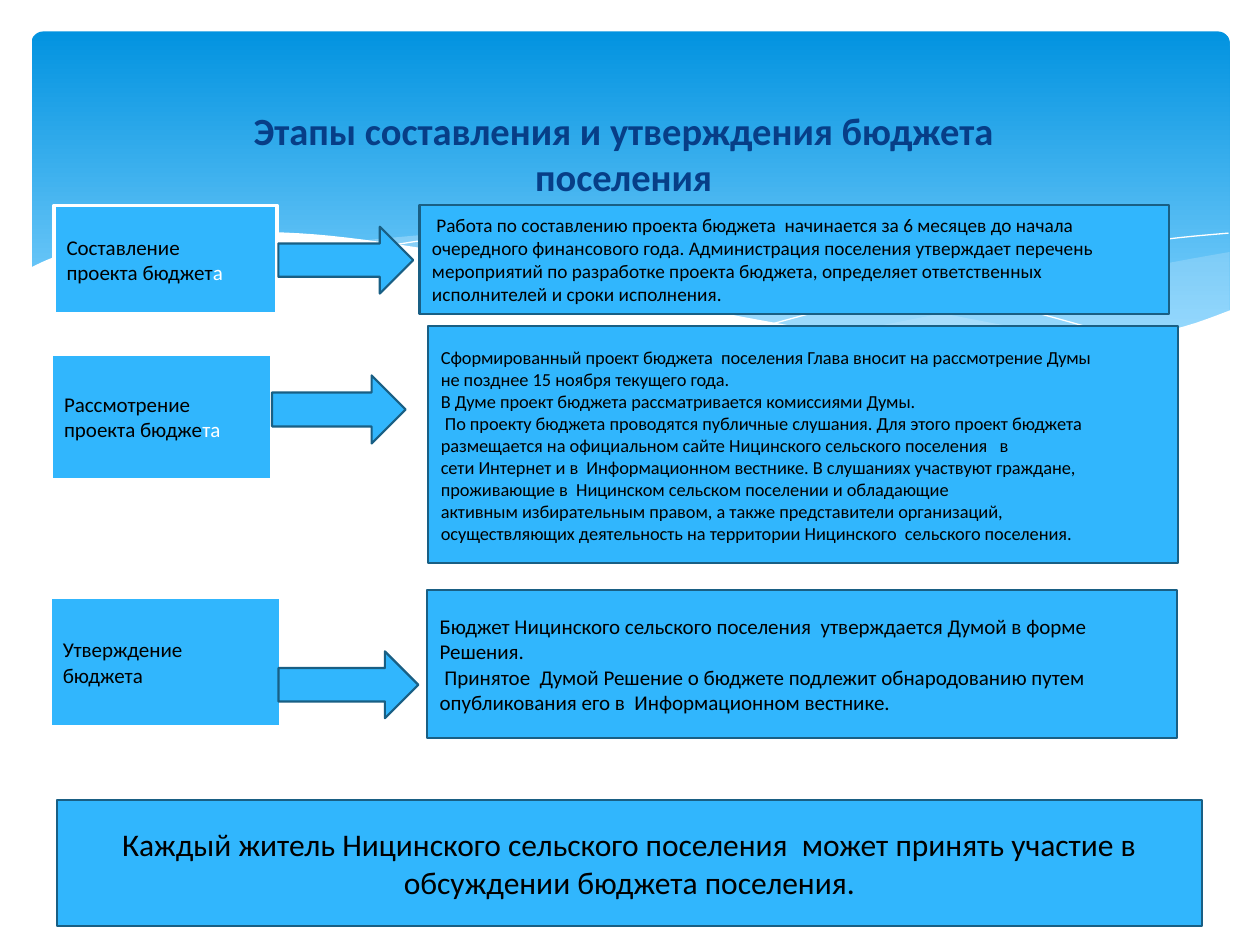
from lxml import etree
from pptx import Presentation
from pptx.dml.color import RGBColor
from pptx.enum.shapes import MSO_SHAPE
from pptx.enum.text import MSO_ANCHOR, PP_ALIGN
from pptx.oxml.ns import qn
from pptx.util import Inches, Pt

RECT, ARROW, ROUNDED = MSO_SHAPE.RECTANGLE, MSO_SHAPE.RIGHT_ARROW, MSO_SHAPE.ROUNDED_RECTANGLE
LEFT, CENTER = PP_ALIGN.LEFT, PP_ALIGN.CENTER
TOP, MIDDLE = MSO_ANCHOR.TOP, MSO_ANCHOR.MIDDLE
FONT = "Calibri"
BLUE, EDGE, NAVY, WHITE, BLACK, MIST = "31B6FD", "195F84", "073E87", "FFFFFF", "000000", "C6E7FC"

WAVE_EDGE = [(0.23, 2.13), (0.46, 2.03), (0.85, 1.93), (1.32, 1.86), (1.93, 1.84), (2.5, 1.86),
             (3.16, 1.94), (3.91, 2.07), (4.47, 2.2), (5.29, 2.39), (6.03, 2.54), (6.88, 2.68),
             (7.61, 2.75), (8.23, 2.77), (8.87, 2.71), (9.4, 2.59), (9.77, 2.46)]
RIGHT_TOP = [(9.76, 2), (9.21, 2.1), (8.61, 2.23), (7.79, 2.42), (7.06, 2.57), (6.61, 2.65)]
RIGHT_BOTTOM = [(6.61, 2.65), (7.19, 2.72), (7.69, 2.77), (8.14, 2.78), (8.63, 2.75),
                (9.05, 2.69), (9.42, 2.59), (9.76, 2.47)]
MIDDLE_TOP = [(8.93, 2.73), (8.07, 2.6), (7.06, 2.4), (6.29, 2.22), (5.55, 2.05), (4.89, 1.94),
              (4.2, 1.87), (3.61, 1.85), (2.86, 1.91)]
MIDDLE_BOTTOM = [(2.86, 1.91), (3.62, 2.03), (4.49, 2.22), (5.3, 2.4), (6.18, 2.58), (6.95, 2.7),
                 (7.61, 2.77), (8.18, 2.78), (8.57, 2.77), (8.93, 2.73)]
LONG_LINE = [(3.09, 1.95), (3.44, 1.9), (4.01, 1.87), (4.69, 1.89), (5.33, 1.94), (6.08, 2.04),
             (6.95, 2.19), (7.95, 2.41), (9.07, 2.72)]
SHORT_LINE = [(6.13, 2.57), (6.95, 2.35), (7.76, 2.16), (8.66, 1.99), (9.24, 1.9), (9.75, 1.85)]

STAGES = [
    dict(name="Составление\nпроекта бюджета", tail=1, size=11,
         name_box=(0.43, 1.63, 1.77, 0.86), arrow_box=(2.21, 1.8, 1.07, 0.53),
         detail_box=(3.33, 1.63, 5.95, 0.86),
         detail=" Работа по составлению проекта бюджета  начинается за 6 месяцев до начала\n"
                "очередного финансового года. Администрация поселения утверждает перечень\n"
                "мероприятий по разработке проекта бюджета, определяет ответственных\n"
                "исполнителей и сроки исполнения."),
    dict(name="Рассмотрение\nпроекта бюджета", tail=2, size=10.5,
         name_box=(0.41, 2.81, 1.75, 1), arrow_box=(2.16, 2.98, 1.06, 0.54),
         detail_box=(3.4, 2.59, 5.95, 1.88),
         detail="Сформированный проект бюджета  поселения Глава вносит на рассмотрение Думы\n"
                "не позднее 15 ноября текущего года.\n"
                "В Думе проект бюджета рассматривается комиссиями Думы.\n"
                " По проекту бюджета проводятся публичные слушания. Для этого проект бюджета\n"
                "размещается на официальном сайте Ницинского сельского поселения   в\n"
                "сети Интернет и в  Информационном вестнике. В слушаниях участвуют граждане,\n"
                "проживающие в  Ницинском сельском поселении и обладающие\n"
                "активным избирательным правом, а также представители организаций,\n"
                "осуществляющих деятельность на территории Ницинского  сельского поселения."),
    dict(name="Утверждение\nбюджета", tail=0, size=12,
         name_box=(0.4, 4.74, 1.83, 1.03), arrow_box=(2.21, 5.17, 1.11, 0.53),
         detail_box=(3.39, 4.68, 5.95, 1.18),
         detail="Бюджет Ницинского сельского поселения  утверждается Думой в форме Решения.\n"
                " Принятое  Думой Решение о бюджете подлежит обнародованию путем\n"
                "опубликования его в  Информационном вестнике."),
]


def rgb(color):
    """Turn a hex string into a colour."""
    return RGBColor.from_string(color)


def write(tf, text, size=12, color=BLACK, bold=False, align=LEFT, anchor=MIDDLE, tail=0):
    """Write one paragraph per line, with the last `tail` letters in white."""
    tf.word_wrap = True
    tf.vertical_anchor = anchor
    lines = text.split("\n")
    for i, line in enumerate(lines):
        p = tf.add_paragraph() if i else tf.paragraphs[0]
        p.alignment = align
        cut = len(line) - (tail if i == len(lines) - 1 else 0)
        for part, part_color in ((line[:cut], color), (line[cut:], WHITE)):
            if part:
                r = p.add_run()
                r.text = part
                r.font.name, r.font.size, r.font.bold = FONT, Pt(size), bold
                r.font.color.rgb = rgb(part_color)


def paint(sp, fill=None, line=None, width=1.25, alpha=None):
    """Set the fill, line and fill opacity of a shape without shadow."""
    sp.shadow.inherit = False
    if fill:
        sp.fill.solid()
        sp.fill.fore_color.rgb = rgb(fill)
    else:
        sp.fill.background()
    if alpha:
        clr = sp.fill._xPr.find(qn("a:solidFill"))[0]
        etree.SubElement(clr, qn("a:alpha")).set("val", str(alpha * 1000))
    if line:
        sp.line.color.rgb = rgb(line)
        sp.line.width = Pt(width)
    else:
        sp.line.fill.background()


def add_block(s, kind, box, line=EDGE, width=1.25):
    """Add a blue preset shape in the given box."""
    sp = s.shapes.add_shape(kind, *map(Inches, box))
    paint(sp, BLUE, line, width)
    return sp


def smooth(points, steps=5):
    """Sample a Catmull-Rom curve through the points."""
    padded = [points[0], *points, points[-1]]
    curve = [points[0]]
    for a, b, c, d in zip(padded, padded[1:], padded[2:], padded[3:]):
        for t in (k / steps for k in range(1, steps + 1)):
            curve.append(tuple(
                (2 * q + (r - p) * t + (2 * p - 5 * q + 4 * r - u) * t ** 2
                 + (3 * q - p - 3 * r + u) * t ** 3) / 2
                for p, q, r, u in zip(a, b, c, d)))
    return curve


def add_outline(s, points, close=True, **look):
    """Add a freeform through points given in inches."""
    start, *rest = [(Inches(x), Inches(y)) for x, y in points]
    builder = s.shapes.build_freeform(*start)
    builder.add_line_segments(rest, close=close)
    paint(builder.convert_to_shape(), **look)


def add_backdrop(s, box):
    """Draw the gradient banner with its waves."""
    sp = s.shapes.add_shape(ROUNDED, *map(Inches, box))
    sp.adjustments[0] = 0.034
    paint(sp)
    sp.fill.gradient()
    sp.fill.gradient_angle = 270
    for stop, (position, color) in zip(sp.fill.gradient_stops, ((0, "0293E0"), (0.9, "83D3FE"))):
        stop.position = position
        stop.color.rgb = rgb(color)
    add_outline(s, smooth(RIGHT_TOP) + smooth(RIGHT_BOTTOM), fill=MIST, alpha=29)
    add_outline(s, smooth(MIDDLE_TOP) + smooth(MIDDLE_BOTTOM), fill=MIST, alpha=40)
    for points in (LONG_LINE, SHORT_LINE):
        add_outline(s, smooth(points), close=False, line=WHITE, width=0)
    add_outline(s, smooth(WAVE_EDGE) + [(9.77, 3.29), (0.23, 3.29)], fill=WHITE)


def add_title(s, box, text):
    """Place the title placeholder in front of the banner."""
    sp = s.shapes.title
    s.shapes._spTree.append(sp._element)
    sp.left, sp.top, sp.width, sp.height = map(Inches, box)
    sp.text_frame.margin_left = Inches(0.5)
    write(sp.text_frame, text, size=22, color=NAVY, bold=True, align=CENTER, anchor=TOP)


def add_stage(s, name, tail, size, name_box, arrow_box, detail_box, detail):
    """Draw a budget stage: its name, an arrow and the explanation."""
    sp = add_block(s, RECT, name_box, line=WHITE, width=2)
    write(sp.text_frame, name, tail=tail)
    add_block(s, ARROW, arrow_box)
    write(add_block(s, RECT, detail_box).text_frame, detail, size=size)


def add_conclusion(s, box, text):
    """Draw the closing statement."""
    write(add_block(s, RECT, box).text_frame, text, size=18, align=CENTER)


def main():
    """Build the slide and save it."""
    prs = Presentation()
    prs.slide_width, prs.slide_height = Inches(10), Inches(7.5)
    s = prs.slides.add_slide(prs.slide_layouts[5])
    add_backdrop(s, (0.25, 0.25, 9.51, 2.7))
    add_title(s, (1.25, 0.8, 7, 0.98), "Этапы составления и утверждения бюджета поселения")
    for stage in STAGES:
        add_stage(s, **stage)
    add_conclusion(s, (0.45, 6.35, 9.09, 1), "Каждый житель Ницинского сельского поселения  "
                   "может принять участие в обсуждении бюджета поселения.")
    prs.save("out.pptx")


if __name__ == "__main__":
    main()
